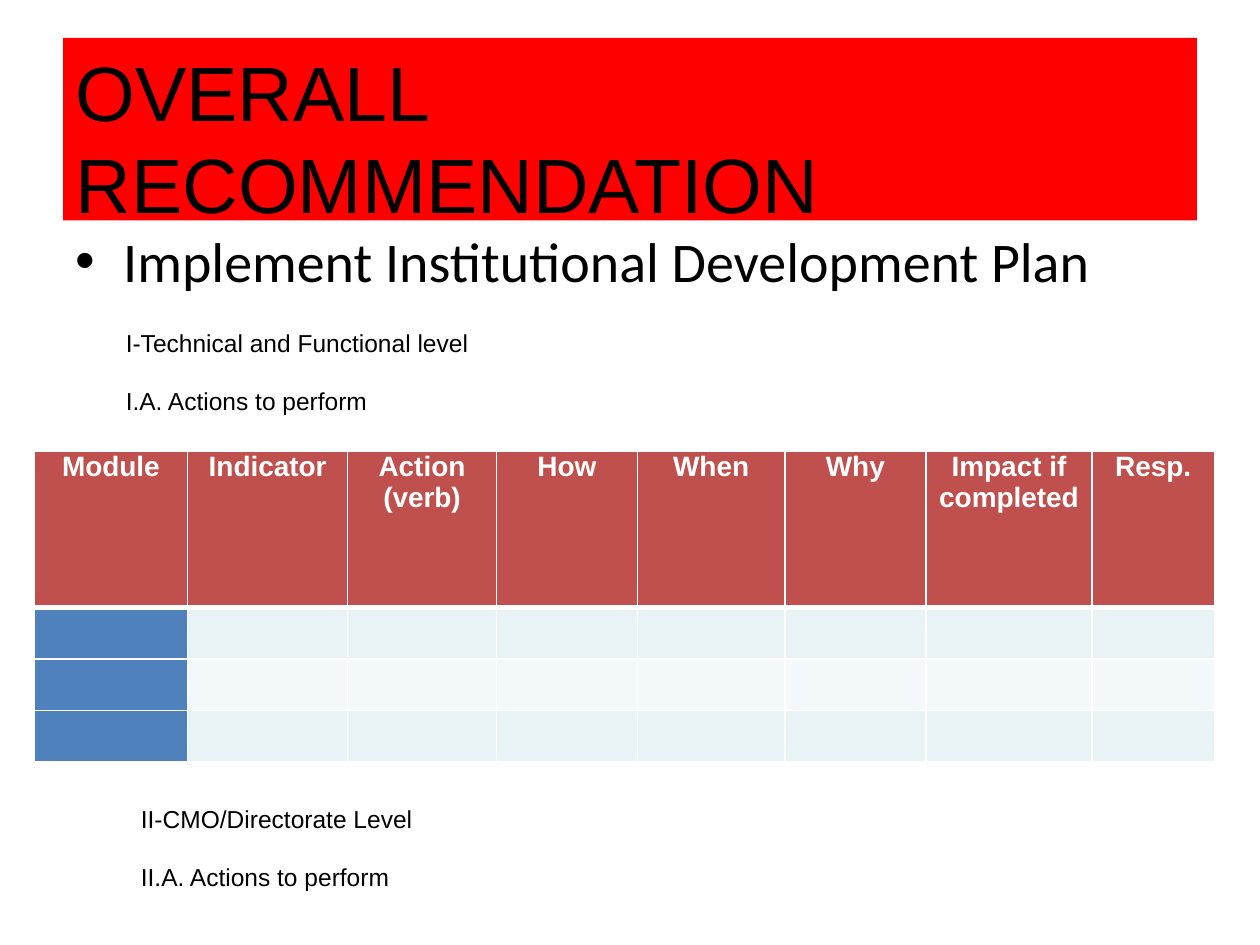
from dataclasses import dataclass

from lxml import etree
from pptx import Presentation
from pptx.dml.color import RGBColor
from pptx.enum.text import MSO_ANCHOR, PP_ALIGN
from pptx.oxml.ns import qn
from pptx.util import Inches, Pt

LEFT, CENTER = PP_ALIGN.LEFT, PP_ALIGN.CENTER
TOP = MSO_ANCHOR.TOP


@dataclass(frozen=True)
class Theme:
    """Colours, fonts and type sizes of the slide."""
    black: str = "000000"
    white: str = "FFFFFF"
    banner: str = "FF0000"
    header: str = "C0504D"
    first_col: str = "4F81BD"
    bands: tuple = ("E7F3F4", "F3F9FA")
    font: str = "Arial"
    body_font: str = "Calibri"
    title_size: int = 44
    body_size: int = 32
    header_size: int = 16
    note_size: int = 14


T = Theme()

HEADERS = ["Module", "Indicator", "Action (verb)", "How", "When", "Why",
           "Impact if completed", "Resp."]
COL_WIDTHS = [1.22, 1.27, 1.18, 1.12, 1.17, 1.12, 1.32, 0.97]
ROW_HEIGHTS = [1.24, 0.41, 0.41, 0.41]


def write(p, text, size=T.note_size, font=T.font, color=T.black, bold=False,
          align=LEFT, before=0):
    """Write one formatted run into a paragraph."""
    p.alignment = align
    p.space_before = Pt(before)
    r = p.add_run()
    r.text = text
    r.font.size = Pt(size)
    r.font.name = font
    r.font.bold = bold
    r.font.color.rgb = RGBColor.from_string(color)


def add_bullet(p, indent):
    """Give a paragraph a round bullet with a hanging indent."""
    pPr = p._p.get_or_add_pPr()
    pPr.set("marL", str(Inches(indent)))
    pPr.set("indent", str(-Inches(indent)))
    etree.SubElement(pPr, qn("a:buFont"), typeface="Arial")
    etree.SubElement(pPr, qn("a:buChar"), char="•")


def add_text_box(s, left, top, width, height):
    """Add a wrapping text box and return its text frame."""
    tf = s.shapes.add_textbox(Inches(left), Inches(top), Inches(width),
                              Inches(height)).text_frame
    tf.word_wrap = True
    return tf


def add_title(s, text):
    """Place the title on its coloured banner."""
    sp = s.shapes.title
    sp.left, sp.top = Inches(0.5), Inches(0.3)
    sp.width, sp.height = Inches(9), Inches(1.45)
    sp.fill.solid()
    sp.fill.fore_color.rgb = RGBColor.from_string(T.banner)
    tf = sp.text_frame
    tf.vertical_anchor = TOP
    write(tf.paragraphs[0], text, size=T.title_size)


def add_body(s, text):
    """Add the bulleted body text."""
    p = add_text_box(s, 0.5, 1.75, 9, 4.95).paragraphs[0]
    add_bullet(p, 0.38)
    write(p, text, size=T.body_size, font=T.body_font)


def add_section(s, left, top, width, heading, subheading):
    """Add a section heading with its subheading below."""
    tf = add_text_box(s, left, top, width, 0.81)
    write(tf.paragraphs[0], heading)
    write(tf.add_paragraph(), subheading, before=16.5)


def set_borders(cell, **widths):
    """Draw white cell borders with the given widths in points."""
    tcPr = cell._tc.get_or_add_tcPr()
    for side, width in widths.items():
        ln = etree.SubElement(tcPr, qn(f"a:ln{side}"), w=str(Pt(width)))
        fill = etree.SubElement(ln, qn("a:solidFill"))
        etree.SubElement(fill, qn("a:srgbClr"), val=T.white)


def cell_color(row, col):
    """Return the fill of a table cell."""
    if row == 0:
        return T.header
    return T.first_col if col == 0 else T.bands[(row - 1) % 2]


def add_action_table(s):
    """Add the action table with its header row and empty rows."""
    table = s.shapes.add_table(
        len(ROW_HEIGHTS), len(COL_WIDTHS), Inches(0.27), Inches(3.58),
        Inches(sum(COL_WIDTHS)), Inches(sum(ROW_HEIGHTS))).table
    table.horz_banding = False
    for col, width in zip(table.columns, COL_WIDTHS):
        col.width = Inches(width)
    for i, height in enumerate(ROW_HEIGHTS):
        table.rows[i].height = Inches(height)
        for j, header in enumerate(HEADERS):
            cell = table.cell(i, j)
            set_borders(cell, L=1, R=1, T=3 if i == 1 else 1,
                        B=3 if i == 0 else 1)
            cell.fill.solid()
            cell.fill.fore_color.rgb = RGBColor.from_string(cell_color(i, j))
            if i == 0:
                cell.margin_left = cell.margin_right = Inches(0.08)
                cell.margin_top = cell.margin_bottom = 0
                write(cell.text_frame.paragraphs[0], header, bold=True,
                      size=T.header_size, color=T.white, align=CENTER)


def main():
    """Build the slide and save it."""
    prs = Presentation()
    prs.slide_width, prs.slide_height = Inches(10), Inches(7.5)
    s = prs.slides.add_slide(prs.slide_layouts.get_by_name("Title Only"))
    add_title(s, "OVERALL RECOMMENDATION")
    add_body(s, "Implement Institutional Development Plan")
    add_action_table(s)
    add_section(s, 0.9, 2.55, 5.63, "I-Technical and Functional level",
                "I.A. Actions to perform")
    add_section(s, 1.02, 6.33, 5, "II-CMO/Directorate Level",
                "II.A. Actions to perform")
    prs.save("out.pptx")


if __name__ == "__main__":
    main()
